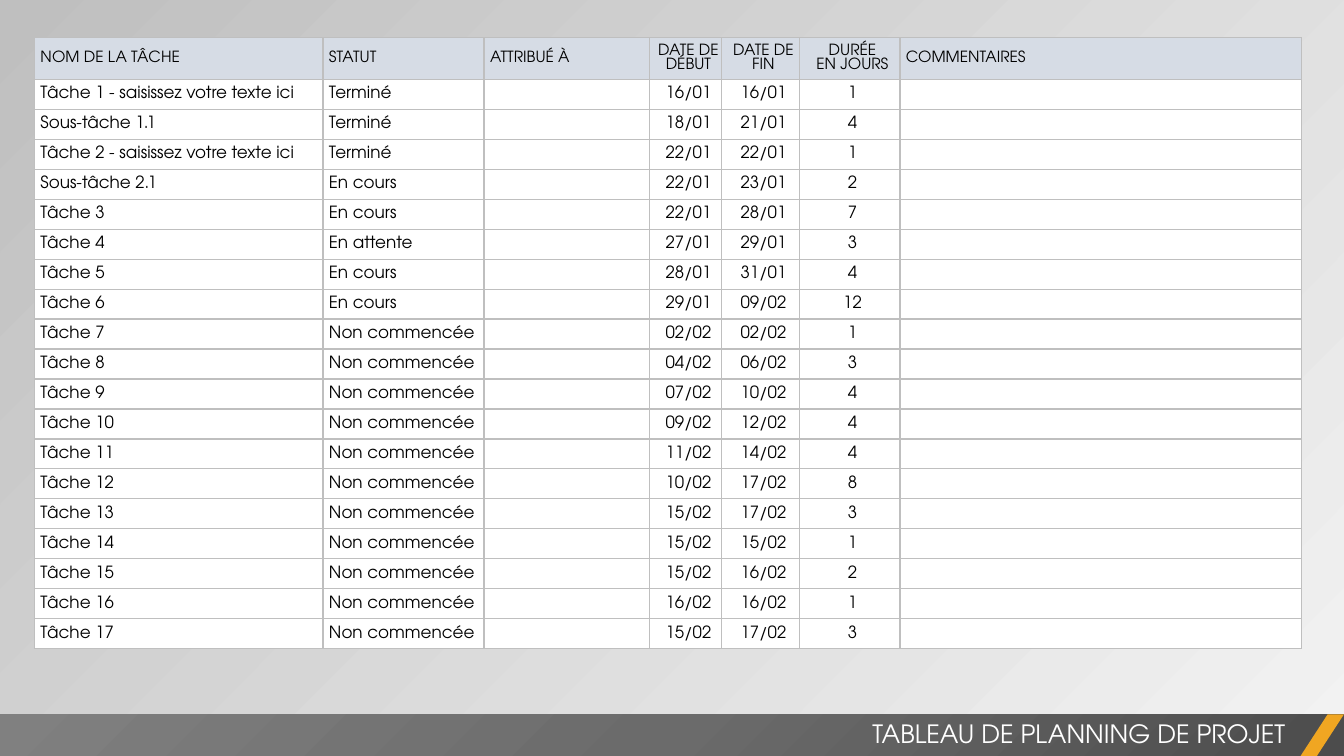
from lxml import etree
from pptx import Presentation
from pptx.dml.color import RGBColor
from pptx.enum.shapes import MSO_SHAPE
from pptx.enum.text import MSO_ANCHOR, MSO_AUTO_SIZE, PP_ALIGN
from pptx.oxml import parse_xml
from pptx.oxml.ns import qn
from pptx.util import Cm, Pt

RECT = MSO_SHAPE.RECTANGLE
SLANT = MSO_SHAPE.PARALLELOGRAM
MIDDLE = MSO_ANCHOR.MIDDLE
GROW = MSO_AUTO_SIZE.SHAPE_TO_FIT_TEXT
LEFT, CENTER, RIGHT = PP_ALIGN.LEFT, PP_ALIGN.CENTER, PP_ALIGN.RIGHT

NS = "http://schemas.openxmlformats.org/drawingml/2006/main"
FONT = "TeX Gyre Adventor"
COLORS = {
    "light": "F2F2F2", "grey": "BFBFBF", "head": "D6DCE5",
    "white": "FFFFFF", "black": "000000", "gold": "F0A622",
    "dark": "4C4C4C", "mid": "6B6B6B", "pale": "808080",
}
CELL = {
    "margin_left": Cm(0.15), "margin_right": 0, "margin_top": 0,
    "margin_bottom": 0, "vertical_anchor": MIDDLE,
}
PLAIN = {"first_row": False, "horz_banding": False}
WIDTHS = [7.27, 4.06, 4.16, 1.83, 1.95, 2.54, 10.13]
HEAD_ROW, TASK_ROW = 1.05, 0.755
DATED = range(3, 6)
HEADS = [
    "NOM DE LA TÂCHE", "STATUT", "ATTRIBUÉ À", "DATE DE DÉBUT",
    "DATE DE FIN", "DURÉE\nEN JOURS", "COMMENTAIRES",
]
TASKS = [
    ("Tâche 1 - saisissez votre texte ici", "Terminé", "16/01", "16/01", 1),
    ("Sous-tâche 1.1", "Terminé", "18/01", "21/01", 4),
    ("Tâche 2 - saisissez votre texte ici", "Terminé", "22/01", "22/01", 1),
    ("Sous-tâche 2.1", "En cours", "22/01", "23/01", 2),
    ("Tâche 3", "En cours", "22/01", "28/01", 7),
    ("Tâche 4", "En attente", "27/01", "29/01", 3),
    ("Tâche 5", "En cours", "28/01", "31/01", 4),
    ("Tâche 6", "En cours", "29/01", "09/02", 12),
]
PENDING = [
    ("02/02", "02/02", 1), ("04/02", "06/02", 3), ("07/02", "10/02", 4),
    ("09/02", "12/02", 4), ("11/02", "14/02", 4), ("10/02", "17/02", 8),
    ("15/02", "17/02", 3), ("15/02", "15/02", 1), ("15/02", "16/02", 2),
    ("16/02", "16/02", 1), ("15/02", "17/02", 3),
]


def tint(name):
    return RGBColor.from_string(COLORS[name])


def apply(target, values):
    for key, value in values.items():
        setattr(target, key, value)


def write(frame, text, size, color, align):
    frame.text = text
    for para in frame.paragraphs:
        para.alignment = align
        for run in para.runs:
            apply(run.font, {"name": FONT, "size": Pt(size), "bold": False})
            run.font.color.rgb = tint(color)
        if not para.runs:
            end = etree.SubElement(para._p, qn("a:endParaRPr"))
            end.set("sz", str(size * 100))


def edge(cell):
    props = cell._tc.get_or_add_tcPr()
    for spot, side in enumerate("LRTB"):
        props.insert(spot, parse_xml(
            f'<a:ln{side} xmlns:a="{NS}" w="12700"><a:solidFill>'
            f'<a:srgbClr val="{COLORS["grey"]}"/></a:solidFill></a:ln{side}>'))


def fill_cell(cell, text, size, color, align):
    apply(cell, CELL)
    cell.fill.solid()
    cell.fill.fore_color.rgb = tint(color)
    edge(cell)
    write(cell.text_frame, text, size, "black", align)


def add_plan(slide):
    rows = [(name, state, "", start, end, str(days), "")
            for name, state, start, end, days in TASKS]
    rows += [(f"Tâche {num}", "Non commencée", "", start, end, str(days), "")
             for num, (start, end, days) in enumerate(PENDING, 7)]
    high = HEAD_ROW + TASK_ROW * len(rows)
    table = slide.shapes.add_table(
        len(rows) + 1, len(WIDTHS), Cm(0.87), Cm(0.95),
        Cm(sum(WIDTHS)), Cm(high)).table
    apply(table, PLAIN)
    for col, width in zip(table.columns, WIDTHS):
        col.width = Cm(width)
    for top, texts in enumerate([HEADS] + rows):
        size, color = (12, "white") if top else (11, "head")
        table.rows[top].height = Cm(TASK_ROW if top else HEAD_ROW)
        for col, text in enumerate(texts):
            align = CENTER if col in DATED else LEFT
            fill_cell(table.cell(top, col), text, size, color, align)
    for col in DATED:
        for para in table.cell(0, col).text_frame.paragraphs:
            para.line_spacing = Pt(10)


def add_block(slide, kind, left, width, color):
    block = slide.shapes.add_shape(
        kind, Cm(left), Cm(18), Cm(width), Cm(1.06))
    block.shadow.inherit = False
    block.line.fill.background()
    block.fill.solid()
    block.fill.fore_color.rgb = tint(color)
    return block


def shade(block, names):
    step = 100000 // (len(names) - 1)
    stops = "".join(
        f'<a:gs pos="{step * spot}"><a:srgbClr val="{COLORS[name]}"/></a:gs>'
        for spot, name in enumerate(names))
    props = block.element.spPr
    props.replace(props.find(qn("a:solidFill")), parse_xml(
        f'<a:gradFill xmlns:a="{NS}"><a:gsLst>{stops}</a:gsLst>'
        '<a:path path="circle"><a:fillToRect l="100000" t="100000"/>'
        '</a:path></a:gradFill>'))


def add_title(slide, text):
    box = slide.shapes.add_textbox(Cm(13.34), Cm(17.98), Cm(19.3), Cm(1.02))
    apply(box.text_frame, {"word_wrap": True, "auto_size": GROW})
    write(box.text_frame, text, 18, "white", RIGHT)


def paint(slide):
    fill = slide.background.fill
    fill.gradient()
    fill.gradient_angle = 135
    for stop, name in zip(fill.gradient_stops, ("light", "grey")):
        stop.color.rgb = tint(name)


def main():
    deck = Presentation()
    apply(deck, {"slide_width": Cm(33.87), "slide_height": Cm(19.05)})
    slide = deck.slides.add_slide(deck.slide_layouts[6])
    paint(slide)
    add_plan(slide)
    shade(add_block(slide, RECT, 0, 33.87, "dark"), ("dark", "mid", "pale"))
    corner = add_block(slide, SLANT, 32.77, 1.1, "gold")
    corner.adjustments[0] = 0.65
    add_title(slide, "TABLEAU DE PLANNING DE PROJET")
    deck.save("out.pptx")


if __name__ == "__main__":
    main()
